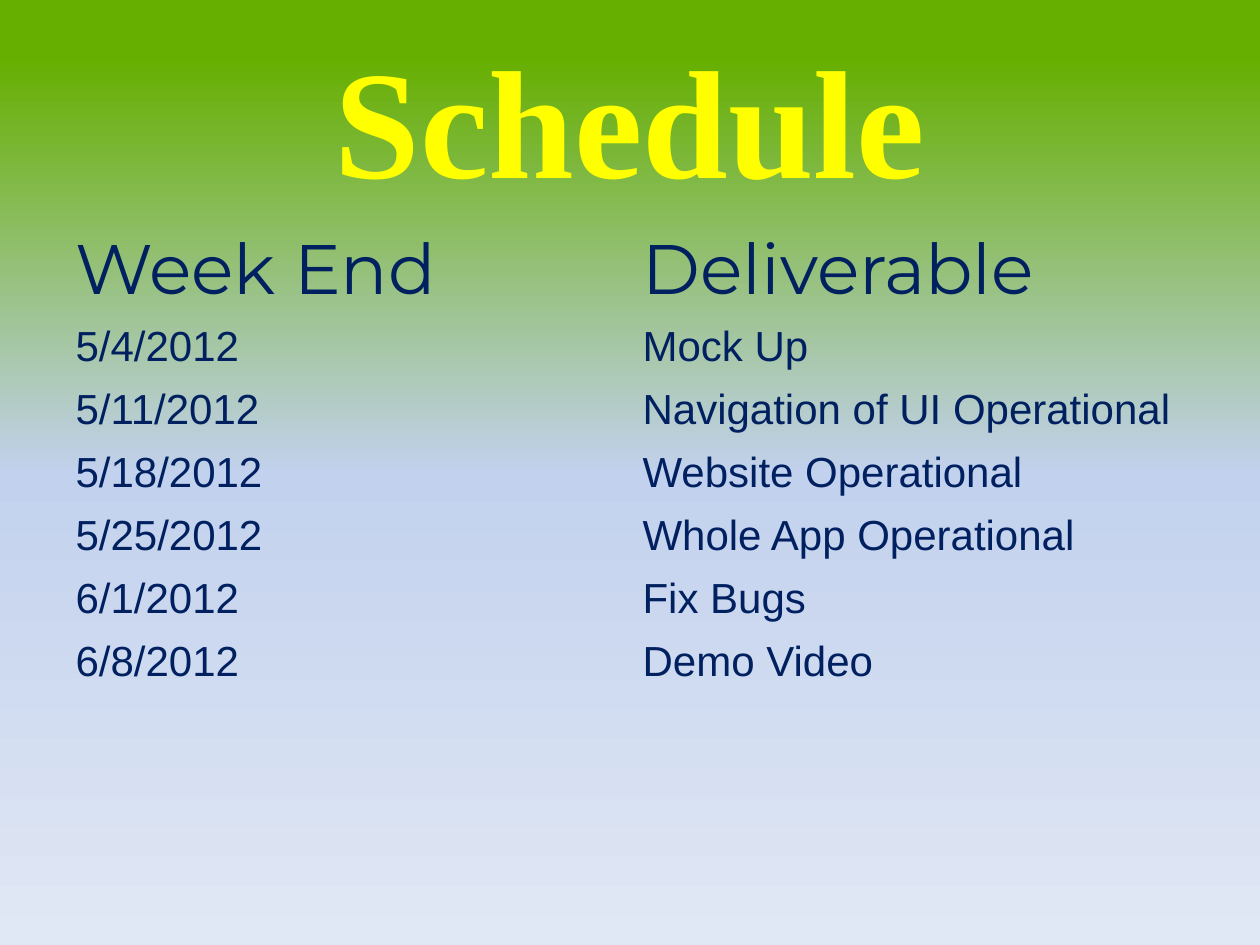
import copy

import pptx
import pptx.dml.color
import pptx.enum.text
import pptx.oxml.ns
import pptx.util

Inches = pptx.util.Inches
RGBColor = pptx.dml.color.RGBColor

# Content
TITLE = "Schedule"
SCHEDULE = [
    ("Week End", "Deliverable"),
    ("5/4/2012", "Mock Up"),
    ("5/11/2012", "Navigation of UI Operational"),
    ("5/18/2012", "Website Operational"),
    ("5/25/2012", "Whole App Operational"),
    ("6/1/2012", "Fix Bugs"),
    ("6/8/2012", "Demo Video"),
]

# Colours and layout
YELLOW = RGBColor(0xFF, 0xFF, 0x00)
NAVY = RGBColor(0x00, 0x20, 0x60)
BACKGROUND_STOPS = [
    (0.06, RGBColor(0x66, 0xAF, 0x00)),
    (0.5, RGBColor(0xC2, 0xD1, 0xED)),
    (1, RGBColor(0xE1, 0xE8, 0xF5)),
]
LEFT, WIDTH = 0.5, 9
ROW_HEIGHT = 0.41
NO_STYLE_NO_GRID = "{2D5ABB26-0587-4C30-8999-92F81FD0307C}"


def style(paragraph, font_name, size, color, bold=False):
    for run in paragraph.runs:
        run.font.name = font_name
        run.font.size = pptx.util.Pt(size)
        run.font.color.rgb = color
        run.font.bold = bold


def paint_background(slide):
    fill = slide.background.fill
    fill.gradient()
    fill.gradient_angle = 270
    # The default gradient has two stops; add the third
    stop_list = next(slide.element.iter(pptx.oxml.ns.qn("a:gsLst")))
    stop_list.append(copy.deepcopy(stop_list[-1]))
    for stop, (position, color) in zip(fill.gradient_stops, BACKGROUND_STOPS):
        stop.position = position
        stop.color.rgb = color


def add_title(slide):
    title = slide.shapes.add_textbox(
        Inches(LEFT), Inches(0.3), Inches(WIDTH), Inches(1.25)).text_frame
    title.word_wrap = True
    title.vertical_anchor = pptx.enum.text.MSO_ANCHOR.MIDDLE
    title.text = TITLE
    title.paragraphs[0].alignment = pptx.enum.text.PP_ALIGN.CENTER
    style(title.paragraphs[0], "Times New Roman", 88, YELLOW, bold=True)


def add_schedule(slide):
    schedule = slide.shapes.add_table(
        len(SCHEDULE), len(SCHEDULE[0]), Inches(LEFT), Inches(1.75),
        Inches(WIDTH), Inches(ROW_HEIGHT * len(SCHEDULE))).table
    schedule.first_row = False
    schedule.horz_banding = False
    style_id = next(schedule._tbl.iter(pptx.oxml.ns.qn("a:tableStyleId")))
    style_id.text = NO_STYLE_NO_GRID
    for row, entries in enumerate(SCHEDULE):
        font_name, size = ("Montserrat", 40) if row == 0 else ("Arial", 24)
        for column, entry in enumerate(entries):
            cell = schedule.cell(row, column)
            cell.fill.background()
            cell.text_frame.text = entry
            style(cell.text_frame.paragraphs[0], font_name, size, NAVY)


def main():
    deck = pptx.Presentation()
    deck.slide_width, deck.slide_height = Inches(10), Inches(7.5)
    slide = deck.slides.add_slide(deck.slide_layouts[6])
    paint_background(slide)
    add_title(slide)
    add_schedule(slide)
    deck.save("out.pptx")


if __name__ == "__main__":
    main()
